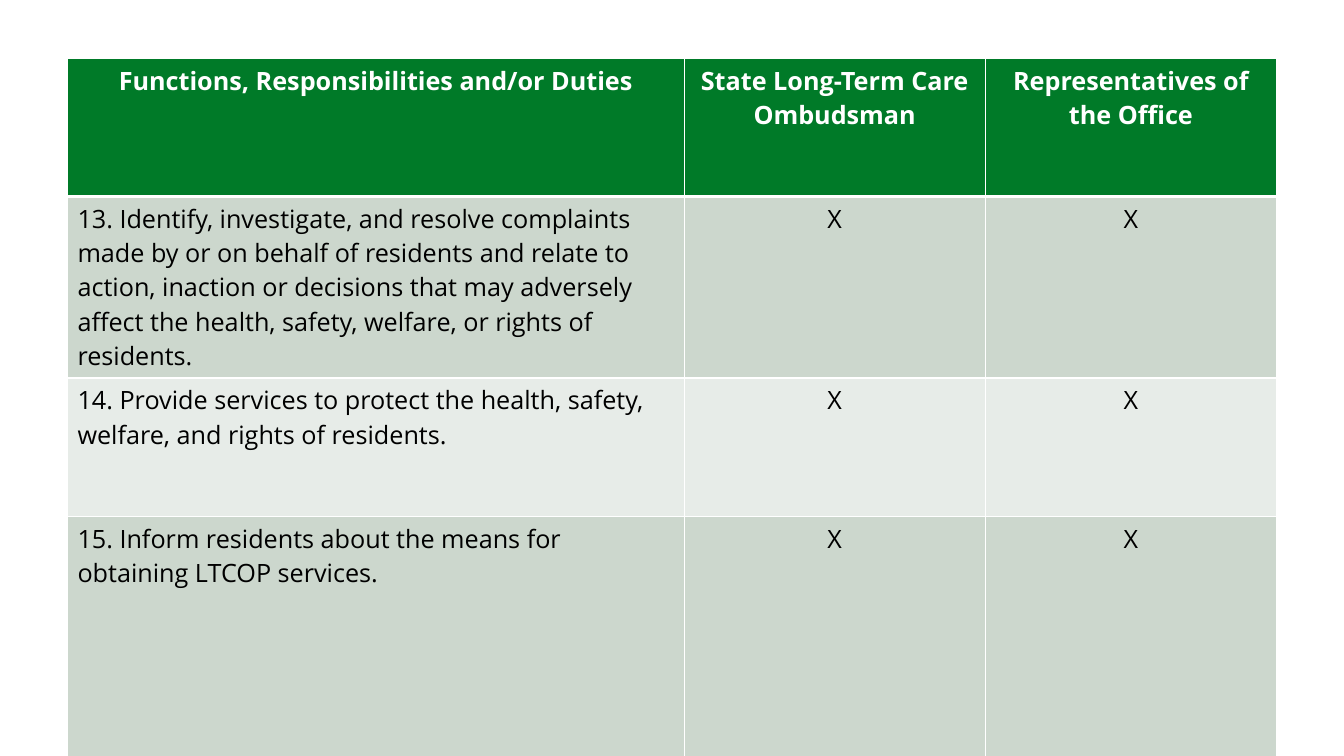
import pptx
import pptx.util
import pptx.dml.color
import pptx.enum.text
import pptx.oxml
import pptx.oxml.ns

Cm = pptx.util.Cm
Pt = pptx.util.Pt
WIDTHS = [15.54, 7.59, 7.34]
HEIGHTS = [3.48, 3.48, 3.48, 6.55]
HEADS = [
    "Functions, Responsibilities and/or Duties",
    "State Long-Term Care Ombudsman",
    "Representatives of the Office",
]
DUTIES = [
    "13. Identify, investigate, and resolve complaints made by or on behalf of "
    "residents and relate to action, inaction or decisions that may adversely "
    "affect the health, safety, welfare, or rights of residents.",
    "14. Provide services to protect the health, safety, welfare, and rights of residents.",
    "15. Inform residents about the means for obtaining LTCOP services.",
]


def color(code):
    return pptx.dml.color.RGBColor.from_string(code)


def add_edge(cell, side, width):
    edge = pptx.oxml.parse_xml(
        f'<a:{side} {pptx.oxml.ns.nsdecls("a")} w="{Pt(width)}">'
        '<a:solidFill><a:srgbClr val="FFFFFF"/></a:solidFill>'
        f'</a:{side}>'
    )
    cell._tc.get_or_add_tcPr().append(edge)


def fill_cell(cell, text, row, col):
    head = row == 0
    edges = {"lnL": 1, "lnR": 1, "lnT": 3 if row == 1 else 1, "lnB": 3 if head else 1}
    for side, width in edges.items():
        add_edge(cell, side, width)
    cell.fill.solid()
    cell.fill.fore_color.rgb = color("007A28" if head else ("E7ECE8", "CCD7CD")[row % 2])
    cell.text = text
    para = cell.text_frame.paragraphs[0]
    if head or col:
        para.alignment = pptx.enum.text.PP_ALIGN.CENTER
    para.font.name = "Open Sans"
    para.font.size = Pt(18)
    para.font.bold = head
    para.font.color.rgb = color("FFFFFF" if head else "000000")


def add_grid(slide, rows):
    frame = slide.shapes.add_table(
        len(rows), len(WIDTHS), Cm(1.7), Cm(1.47), Cm(sum(WIDTHS)), Cm(sum(HEIGHTS))
    )
    table = frame.table
    for col, width in zip(table.columns, WIDTHS):
        col.width = Cm(width)
    for row, height in zip(table.rows, HEIGHTS):
        row.height = Cm(height)
    for row, texts in enumerate(rows):
        for col, text in enumerate(texts):
            fill_cell(table.cell(row, col), text, row, col)


def main():
    deck = pptx.Presentation()
    deck.slide_width = Cm(33.87)
    deck.slide_height = Cm(19.05)
    slide = deck.slides.add_slide(deck.slide_layouts[6])
    add_grid(slide, [HEADS] + [[duty, "X", "X"] for duty in DUTIES])
    deck.save("out.pptx")


if __name__ == "__main__":
    main()
